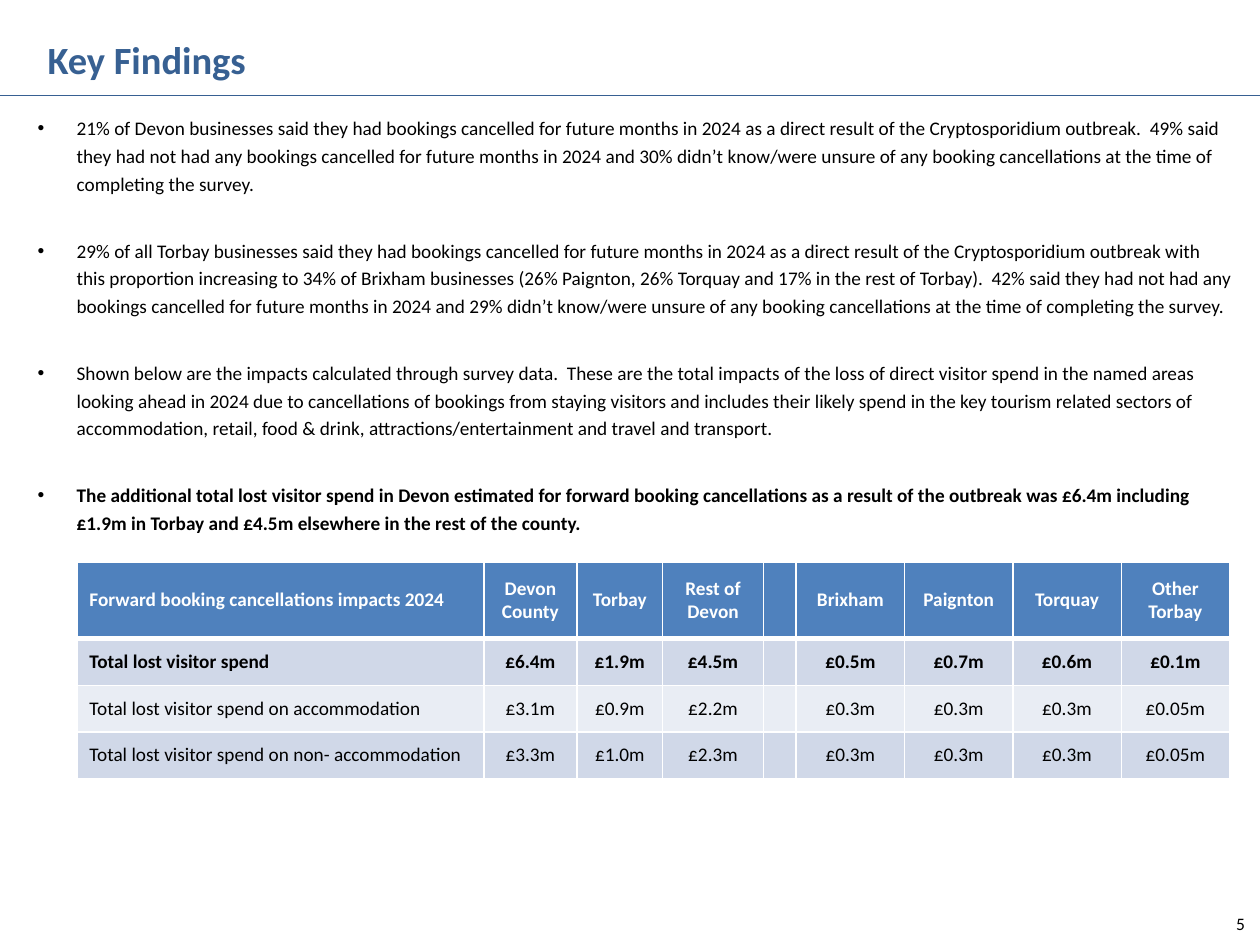
"""Build the Key Findings slide on forward booking cancellations."""
from lxml import etree
from pptx import Presentation
from pptx.dml.color import RGBColor
from pptx.enum.shapes import MSO_CONNECTOR
from pptx.enum.text import MSO_ANCHOR, PP_ALIGN
from pptx.oxml.ns import qn
from pptx.util import Inches, Pt

STRAIGHT = MSO_CONNECTOR.STRAIGHT
MIDDLE = MSO_ANCHOR.MIDDLE
LEFT, CENTER, RIGHT = PP_ALIGN.LEFT, PP_ALIGN.CENTER, PP_ALIGN.RIGHT
NAVY = RGBColor(0x37, 0x60, 0x92)
BLUE = RGBColor(0x4F, 0x81, 0xBD)
BAND_DARK = RGBColor(0xD0, 0xD8, 0xE8)
BAND_LIGHT = RGBColor(0xE9, 0xED, 0xF4)
WHITE = RGBColor(0xFF, 0xFF, 0xFF)
BLACK = RGBColor(0, 0, 0)

FINDINGS = [
    "21% of Devon businesses said they had bookings cancelled for future months in 2024 "
    "as a direct result of the Cryptosporidium outbreak.  49% said they had not had any "
    "bookings cancelled for future months in 2024 and 30% didn’t know/were unsure of any "
    "booking cancellations at the time of completing the survey.",
    "29% of all Torbay businesses said they had bookings cancelled for future months in 2024 "
    "as a direct result of the Cryptosporidium outbreak with this proportion increasing to "
    "34% of Brixham businesses (26% Paignton, 26% Torquay and 17% in the rest of Torbay).  "
    "42% said they had not had any bookings cancelled for future months in 2024 and 29% "
    "didn’t know/were unsure of any booking cancellations at the time of completing the survey.",
    "Shown below are the impacts calculated through survey data.  These are the total impacts "
    "of the loss of direct visitor spend in the named areas looking ahead in 2024 due to "
    "cancellations of bookings from staying visitors and includes their likely spend in the "
    "key tourism related sectors of accommodation, retail, food & drink, "
    "attractions/entertainment and travel and transport.",
    "The additional total lost visitor spend in Devon estimated for forward booking "
    "cancellations as a result of the outbreak was £6.4m including £1.9m in Torbay and "
    "£4.5m elsewhere in the rest of the county.",
]
IMPACTS = [
    ["Forward booking cancellations impacts 2024", "Devon County", "Torbay", "Rest of Devon",
     "", "Brixham", "Paignton", "Torquay", "Other Torbay"],
    ["Total lost visitor spend", "£6.4m", "£1.9m", "£4.5m",
     "", "£0.5m", "£0.7m", "£0.6m", "£0.1m"],
    ["Total lost visitor spend on accommodation", "£3.1m", "£0.9m", "£2.2m",
     "", "£0.3m", "£0.3m", "£0.3m", "£0.05m"],
    ["Total lost visitor spend on non- accommodation", "£3.3m", "£1.0m", "£2.3m",
     "", "£0.3m", "£0.3m", "£0.3m", "£0.05m"],
]
COLUMN_WIDTHS = [3.23, 0.74, 0.68, 0.8, 0.26] + [0.86] * 4
ROW_HEIGHTS = [0.61] + [0.37] * 3
ROW_FILLS = [BLUE, BAND_DARK, BAND_LIGHT, BAND_DARK]


def write(para, text, size, color=BLACK, bold=False, align=LEFT):
    para.text = text
    para.alignment = align
    para.font.name = "Calibri"
    para.font.size = Pt(size)
    para.font.bold = bold
    para.font.color.rgb = color


def add_border(cell, side, width):
    line = etree.SubElement(cell._tc.get_or_add_tcPr(), qn(f"a:ln{side}"), w=str(Pt(width)))
    fill = etree.SubElement(line, qn("a:solidFill"))
    etree.SubElement(fill, qn("a:srgbClr"), val=str(WHITE))


deck = Presentation()
deck.slide_width, deck.slide_height = Inches(10), Inches(7.5)
page = deck.slides.add_slide(deck.slide_layouts[6])

rule = page.shapes.add_connector(STRAIGHT, 0, Inches(0.76), Inches(10), Inches(0.76))
rule.line.color.rgb = NAVY
rule.line.width = Pt(0.75)
etree.SubElement(rule._element.spPr, qn("a:effectLst"))

title = page.shapes.add_textbox(Inches(0.28), Inches(0.16), Inches(1.79), Inches(0.52))
title.text_frame.word_wrap = False
heading = title.text_frame.paragraphs[0]
write(heading, "Key Findings", 22, NAVY, True)
heading.line_spacing = 1.2

body = page.shapes.add_textbox(Inches(0.2), Inches(0.84), Inches(9.69), Inches(7.05))
frame = body.text_frame
frame.word_wrap = True
for index, finding in enumerate(FINDINGS):
    para = frame.add_paragraph() if index else frame.paragraphs[0]
    write(para, finding, 11, bold=index == len(FINDINGS) - 1)
    para.line_spacing = 1.2
    para.space_before = Pt(22.3 if index else 3.1)
    properties = para._p.get_or_add_pPr()
    properties.set("marL", str(Inches(0.31)))
    properties.set("indent", str(Inches(-0.31)))
    bullet_font = etree.Element(qn("a:buFont"), typeface="Arial")
    bullet = etree.Element(qn("a:buChar"), char="•")
    defaults = properties.find(qn("a:defRPr"))
    defaults.addprevious(bullet_font)
    defaults.addprevious(bullet)

table = page.shapes.add_table(len(IMPACTS), len(COLUMN_WIDTHS), Inches(0.61), Inches(4.46),
                              Inches(9.15), Inches(1.73)).table
for column, width in zip(table.columns, COLUMN_WIDTHS):
    column.width = Inches(width)
for row_index, values in enumerate(IMPACTS):
    table.rows[row_index].height = Inches(ROW_HEIGHTS[row_index])
    for column_index, value in enumerate(values):
        cell = table.cell(row_index, column_index)
        cell.vertical_anchor = MIDDLE
        write(cell.text_frame.paragraphs[0], value, 11,
              BLACK if row_index else WHITE, row_index < 2,
              CENTER if column_index else LEFT)
        for side in "LRTB":
            thick = (row_index, side) in [(0, "B"), (1, "T")]
            add_border(cell, side, 3 if thick else 1)
        cell.fill.solid()
        cell.fill.fore_color.rgb = ROW_FILLS[row_index]

number = page.shapes.add_textbox(Inches(7.65), Inches(7.13), Inches(2.33), Inches(0.4))
number.text_frame.word_wrap = True
number.text_frame.vertical_anchor = MIDDLE
write(number.text_frame.paragraphs[0], "5", 10, align=RIGHT)

deck.save("out.pptx")
